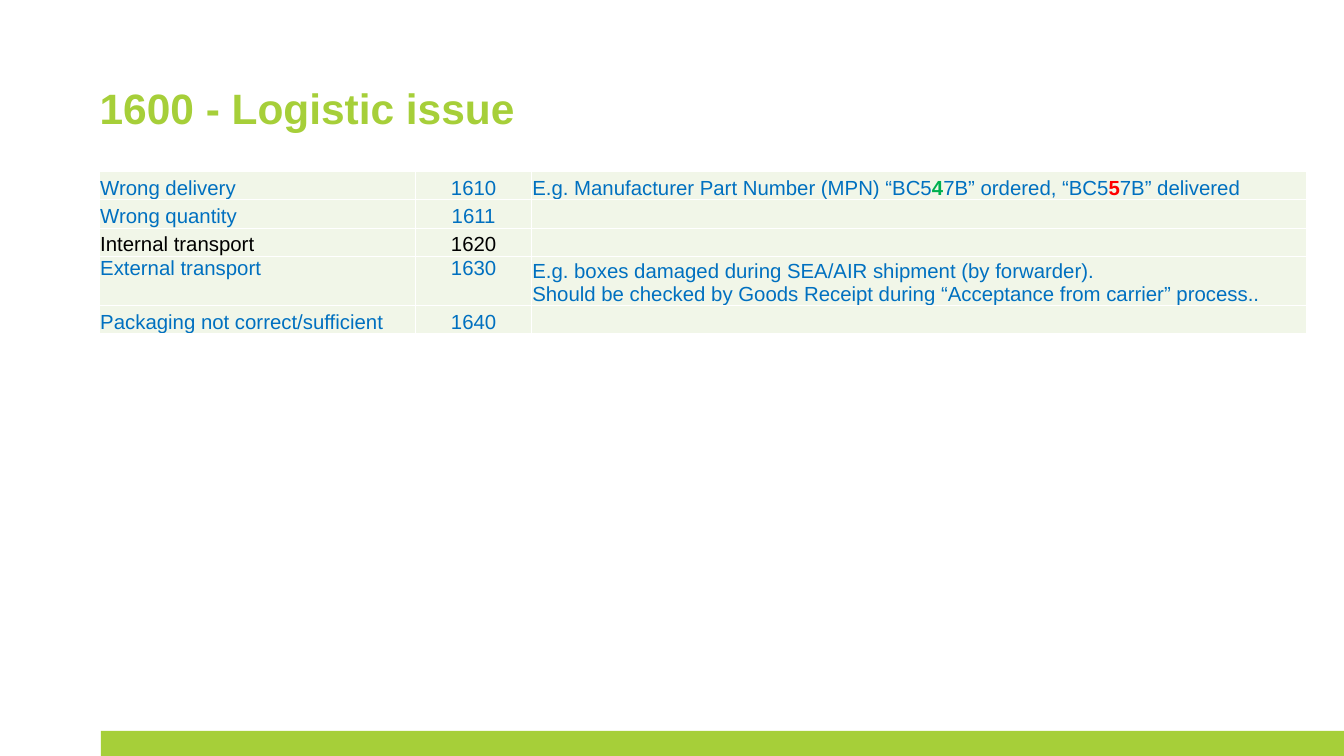
from dataclasses import dataclass

from lxml import etree
from pptx import Presentation
from pptx.dml.color import RGBColor
from pptx.enum import shapes, text
from pptx.oxml import ns
from pptx.util import Emu, Pt

EMU_PER_PX = 9144
LIME = RGBColor(0xA6, 0xCF, 0x39)
PALE_GREEN = RGBColor(0xF1, 0xF6, 0xE8)
BLUE = RGBColor(0x00, 0x70, 0xC0)
GREEN = RGBColor(0x00, 0xB0, 0x50)
RED = RGBColor(0xFF, 0x00, 0x00)
BLACK = RGBColor(0x00, 0x00, 0x00)
WHITE = RGBColor(0xFF, 0xFF, 0xFF)

SLIDE_SIZE = (2199, 1237)
TITLE_BOX = (163, 133, 1872, 85)
FOOTER_BOX = (165, 1196, 2034, 41)
TABLE_ORIGIN = (163, 280)
COLUMN_WIDTHS = (517, 190, 1268)


def px(length: int) -> Emu:
    """Turn px into EMU."""
    return Emu(length * EMU_PER_PX)


TITLE_FORMAT = {
    "margin_left": 0, "margin_right": 0, "margin_top": 0, "margin_bottom": 0,
    "word_wrap": True, "vertical_anchor": text.MSO_ANCHOR.MIDDLE,
}
CELL_FORMAT = {
    "margin_left": px(1), "margin_right": px(1), "margin_top": px(1), "margin_bottom": 0,
}


@dataclass(frozen=True)
class Span:
    """A stretch of text, in the colour of its row unless highlighted."""
    words: str
    highlight: RGBColor | None = None


@dataclass(frozen=True)
class Issue:
    """One issue code of the table, with its example as paragraphs of spans."""
    name: str
    code: str
    example: tuple[tuple[Span, ...], ...] = ()
    color: RGBColor = BLUE
    height: int = 46
    label_anchor: text.MSO_ANCHOR = text.MSO_ANCHOR.BOTTOM


ISSUES = (
    Issue("Wrong delivery", "1610", ((
        Span("E.g. Manufacturer Part Number (MPN) “BC5"), Span("4", GREEN),
        Span("7B” ordered, “BC5"), Span("5", RED), Span("7B” delivered"),
    ),), height=47),
    Issue("Wrong quantity", "1611"),
    Issue("Internal transport", "1620", color=BLACK),
    Issue("External transport", "1630", (
        (Span("E.g. boxes damaged during SEA/AIR shipment (by forwarder)."),),
        (Span("Should be checked by Goods Receipt during “Acceptance from carrier” process.."),),
    ), height=75, label_anchor=text.MSO_ANCHOR.TOP),
    Issue("Packaging not correct/sufficient", "1640"),
)


def apply_format(target, values: dict) -> None:
    """Set each attribute of the target to its format value."""
    for attribute, value in values.items():
        setattr(target, attribute, value)


def add_span(paragraph, words: str, size: int, color: RGBColor, bold: bool) -> None:
    """Append one formatted run to a paragraph."""
    run = paragraph.add_run()
    run.text = words
    apply_format(run.font, {"name": "Arial", "size": Pt(size), "bold": bold})
    run.font.color.rgb = color


def add_borders(cell) -> None:
    """Give a cell thin white borders, ahead of its fill."""
    properties = cell._tc.get_or_add_tcPr()
    for position, side in enumerate(("lnL", "lnR", "lnT", "lnB")):
        border = etree.Element(ns.qn(f"a:{side}"), w=str(Pt(1)))
        fill = etree.SubElement(border, ns.qn("a:solidFill"))
        etree.SubElement(fill, ns.qn("a:srgbClr"), val=str(WHITE))
        properties.insert(position, border)


def fill_cell(cell, paragraphs: tuple[tuple[Span, ...], ...], color: RGBColor,
              anchor: text.MSO_ANCHOR, align: text.PP_ALIGN) -> None:
    """Format a cell and write its paragraphs."""
    apply_format(cell, CELL_FORMAT | {"vertical_anchor": anchor})
    cell.fill.solid()
    cell.fill.fore_color.rgb = PALE_GREEN
    add_borders(cell)
    frame = cell.text_frame
    for index, spans in enumerate(paragraphs):
        paragraph = frame.add_paragraph() if index else frame.paragraphs[0]
        paragraph.alignment = align
        for span in spans:
            add_span(paragraph, span.words, 24, span.highlight or color, span.highlight is not None)


def add_issue_table(slide) -> None:
    """Draw the table of issue codes."""
    size = (sum(COLUMN_WIDTHS), sum(issue.height for issue in ISSUES))
    issue_table = slide.shapes.add_table(
        len(ISSUES), len(COLUMN_WIDTHS), *map(px, TABLE_ORIGIN + size)).table
    apply_format(issue_table, {"first_row": False, "horz_banding": False})
    for column, width in zip(issue_table.columns, COLUMN_WIDTHS):
        column.width = px(width)
    left, center = text.PP_ALIGN.LEFT, text.PP_ALIGN.CENTER
    for row, issue in zip(issue_table.rows, ISSUES):
        row.height = px(issue.height)
        name, code, example = row.cells
        fill_cell(name, ((Span(issue.name),),), issue.color, issue.label_anchor, left)
        fill_cell(code, ((Span(issue.code),),), issue.color, issue.label_anchor, center)
        fill_cell(example, issue.example, issue.color, text.MSO_ANCHOR.BOTTOM, left)


def add_footer(slide) -> None:
    """Draw the lime bar along the bottom edge."""
    footer = slide.shapes.add_shape(shapes.MSO_SHAPE.RECTANGLE, *map(px, FOOTER_BOX))
    footer.shadow.inherit = False
    footer.fill.solid()
    footer.fill.fore_color.rgb = LIME
    footer.line.fill.background()


def add_title(slide) -> None:
    """Write the slide title."""
    title = slide.shapes.add_textbox(*map(px, TITLE_BOX)).text_frame
    apply_format(title, TITLE_FORMAT)
    add_span(title.paragraphs[0], "1600 - Logistic issue", 50, LIME, True)


def main() -> None:
    """Build and save the slide."""
    deck = Presentation()
    deck.slide_width, deck.slide_height = map(px, SLIDE_SIZE)
    slide = deck.slides.add_slide(deck.slide_layouts[6])
    add_footer(slide)
    add_title(slide)
    add_issue_table(slide)
    deck.save("out.pptx")


if __name__ == "__main__":
    main()
